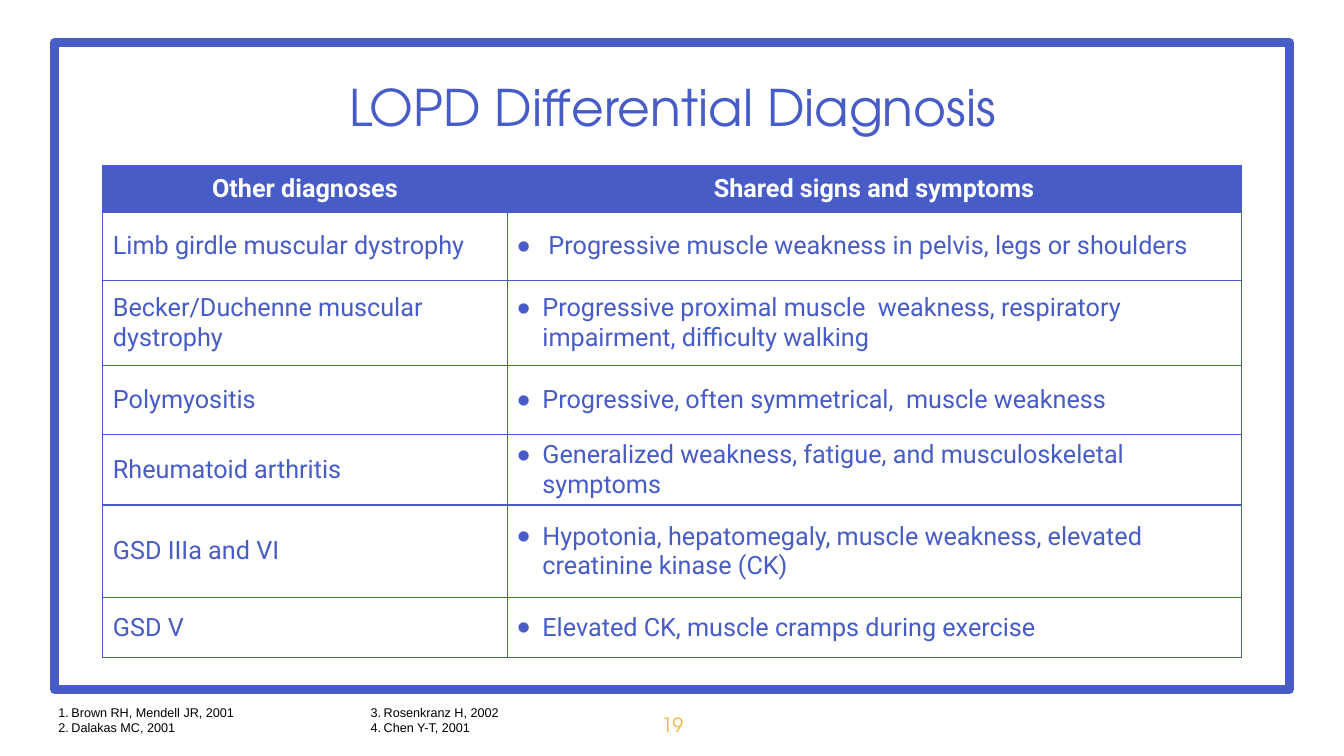
from lxml import etree
from pptx import Presentation
from pptx.dml.color import RGBColor
from pptx.enum import shapes, text
from pptx.oxml.ns import qn
from pptx.util import Inches, Pt

BLUE = RGBColor(0x48, 0x5C, 0xC7)
GOLD = RGBColor(0xF1, 0xB4, 0x34)
WHITE = RGBColor(0xFF, 0xFF, 0xFF)
BLACK = RGBColor(0, 0, 0)
CENTER = text.PP_ALIGN.CENTER
MIDDLE = text.MSO_ANCHOR.MIDDLE


def write(p, content, color, align=None, **fmt):
    r = p.add_run()
    r.text = content
    r.font.color.rgb = color
    for key, value in fmt.items():
        setattr(r.font, key, value)
    p.alignment = align


def set_bullet(p, indent, *elements):
    pPr = p._p.get_or_add_pPr()
    pPr.set("marL", str(Inches(indent)))
    pPr.set("indent", str(-Inches(indent)))
    for tag, attrs in elements:
        etree.SubElement(pPr, qn(tag), attrs)


prs = Presentation()
prs.slide_width, prs.slide_height = Inches(13.33), Inches(7.5)
s = prs.slides.add_slide(prs.slide_layouts[5])

# Frame
frame = s.shapes.add_shape(shapes.MSO_SHAPE.RECTANGLE, Inches(0.54), Inches(0.42),
                           Inches(12.25), Inches(6.42))
frame.shadow.inherit = False
frame.fill.background()
frame.line.color.rgb = BLUE
frame.line.width = Pt(6)
etree.SubElement(frame.line._get_or_add_ln(), qn("a:round"))

# Slide number
number = s.shapes.add_textbox(Inches(6.38), Inches(7.04), Inches(0.58), Inches(0.3))
tf = number.text_frame
tf.word_wrap = True
tf.vertical_anchor = MIDDLE
write(tf.paragraphs[0], "19", GOLD, CENTER, size=Pt(14), name="TeX Gyre Adventor")

# Title
title = s.shapes.title
title.left, title.top = Inches(0.54), Inches(0.67)
title.width, title.height = Inches(12.26), Inches(0.76)
tf = title.text_frame
tf.vertical_anchor = MIDDLE
write(tf.paragraphs[0], "LOPD Differential Diagnosis", BLUE, CENTER,
      size=Pt(36), name="TeX Gyre Adventor")

# Diagnosis table
rows = [
    (0.46, "Other diagnoses", "Shared signs and symptoms"),
    (0.68, "Limb girdle muscular dystrophy",
     "Progressive muscle weakness in pelvis, legs or shoulders"),
    (0.85, "Becker/Duchenne muscular dystrophy",
     "Progressive proximal muscle  weakness, respiratory impairment, difficulty walking"),
    (0.68, "Polymyositis", "Progressive, often symmetrical,  muscle weakness"),
    (0.68, "Rheumatoid arthritis",
     "Generalized weakness, fatigue, and musculoskeletal symptoms"),
    (0.92, "GSD IIIa and VI",
     "Hypotonia, hepatomegaly, muscle weakness, elevated creatinine kinase (CK)"),
    (0.59, "GSD V", "Elevated CK, muscle cramps during exercise"),
]
table = s.shapes.add_table(len(rows), 2, Inches(1.02), Inches(1.64),
                           Inches(11.29), Inches(4.86)).table
table.horz_banding = False
for column, width in zip(table.columns, (4.01, 7.28)):
    column.width = Inches(width)

for i, (height, *contents) in enumerate(rows):
    table.rows[i].height = Inches(height)
    header = i == 0
    for j, content in enumerate(contents):
        cell = table.cell(i, j)
        cell.vertical_anchor = MIDDLE
        tcPr = cell._tc.get_or_add_tcPr()
        for side in ("L", "R", "T", "B"):
            width = 2 if header and side == "B" else 1
            ln = etree.SubElement(tcPr, qn(f"a:ln{side}"), w=str(Pt(width)))
            fill = etree.SubElement(ln, qn("a:solidFill"))
            etree.SubElement(fill, qn("a:srgbClr"), val=str(BLUE))
        if header:
            cell.fill.solid()
            cell.fill.fore_color.rgb = BLUE
        else:
            cell.fill.background()
        p = cell.text_frame.paragraphs[0]
        if j == 1 and not header:
            set_bullet(p, 0.31 if i == 1 else 0.25,
                       ("a:buSzPct", {"val": "150000"}),
                       ("a:buFont", {"typeface": "Arial"}),
                       ("a:buChar", {"char": "•"}))
        write(p, content, WHITE if header else BLUE, CENTER if header else None,
              size=Pt(18), name="Roboto", bold=header)

# References, flowing in columns
references = ["Brown RH, Mendell JR, 2001", "Dalakas MC, 2001",
              "Rosenkranz H, 2002", "Chen Y-T, 2001"]
box = s.shapes.add_textbox(Inches(0.48), Inches(6.94), Inches(9.49), Inches(0.4))
tf = box.text_frame
tf.word_wrap = True
tf.auto_size = text.MSO_AUTO_SIZE.SHAPE_TO_FIT_TEXT
tf._txBody.bodyPr.set("numCol", "3")
for i, reference in enumerate(references):
    p = tf.add_paragraph() if i else tf.paragraphs[0]
    set_bullet(p, 0.13, ("a:buFont", {"typeface": "Arial"}),
               ("a:buAutoNum", {"type": "arabicPeriod"}))
    write(p, reference, BLACK, size=Pt(9), name="Arial")

prs.save("out.pptx")
